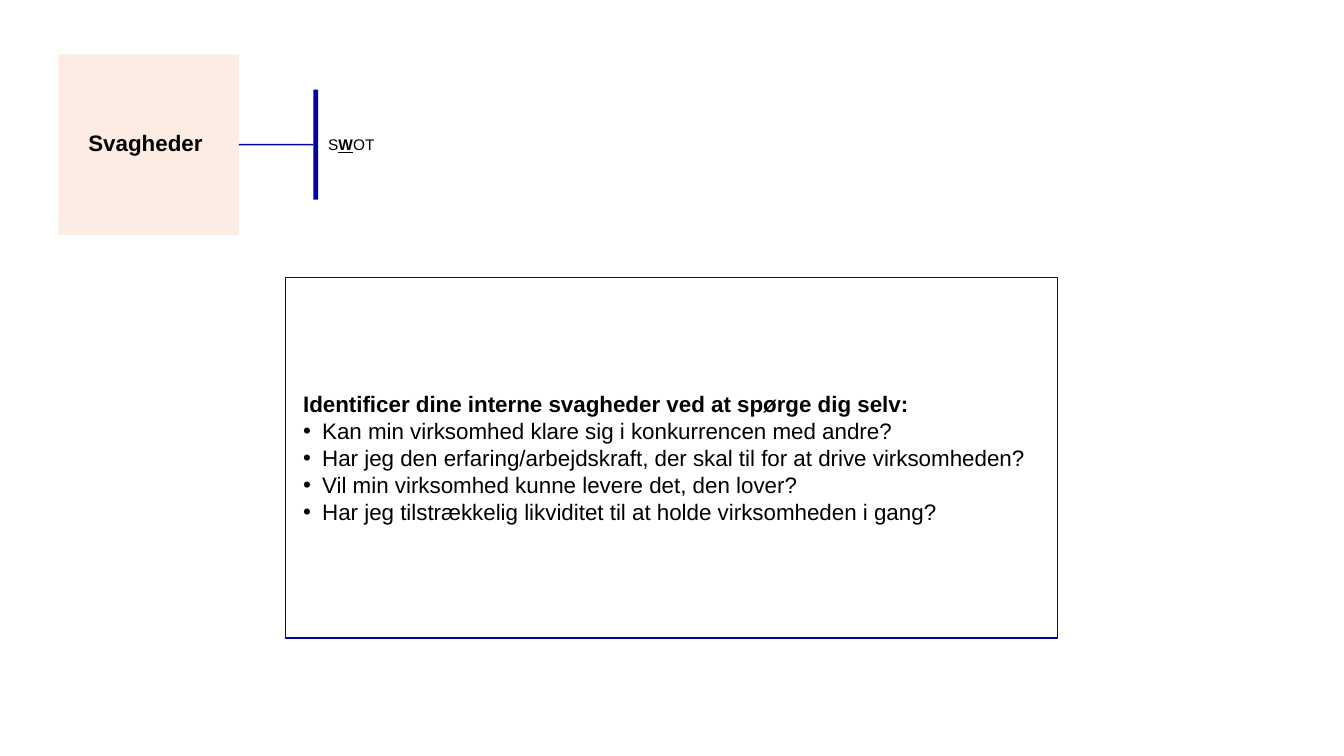
"""Build the slide on weaknesses in a SWOT analysis."""
from lxml.etree import SubElement
from pptx import Presentation
from pptx.dml.color import RGBColor
from pptx.enum.shapes import MSO_CONNECTOR, MSO_SHAPE
from pptx.enum.text import MSO_ANCHOR, PP_ALIGN
from pptx.oxml.ns import qn
from pptx.util import Cm, Pt

BLUE, PEACH, BLACK = "03009F", "FDECE3", "000000"
BODY = {"name": "Arial", "size": Pt(16), "bold": False}
STRONG = {**BODY, "bold": True}
SMALL = {**BODY, "size": Pt(11)}
MARKED = {**SMALL, "bold": True, "underline": True}

TITLE = "Svagheder "
LABEL = [("S", SMALL), ("W", MARKED), ("OT", SMALL)]
HEADING = "Identificer dine interne svagheder ved at spørge dig selv:"
QUESTIONS = [
    "Kan min virksomhed klare sig i konkurrencen med andre?",
    "Har jeg den erfaring/arbejdskraft, der skal til for at drive virksomheden?",
    "Vil min virksomhed kunne levere det, den lover?",
    "Har jeg tilstrækkelig likviditet til at holde virksomheden i gang?",
]

SQUARE_LEFT, SQUARE_TOP, SQUARE_SIZE = 1.47, 1.37, 4.55
BAR_LEFT, BAR_WIDTH, BAR_HEIGHT = 7.9, 0.12, 2.77
LABEL_WIDTH, LABEL_HEIGHT = 4.72, 0.74
QUESTION_BOX = (7.19, 6.99, 19.46, 9.09)
MIDDLE = SQUARE_TOP + SQUARE_SIZE / 2


def color(value):
    """Turn a hex string into a colour."""
    return RGBColor.from_string(value)


def set_values(target, values):
    """Set each named attribute on the target."""
    for name, value in values.items():
        setattr(target, name, value)


def add_runs(paragraph, runs):
    """Add formatted black runs to a paragraph."""
    for text, values in runs:
        run = paragraph.add_run()
        run.text = text
        set_values(run.font, values)
        run.font.color.rgb = color(BLACK)


def add_rectangle(slide, box, fill=None, line=None):
    """Add a flat rectangle with an optional fill and outline."""
    shape = slide.shapes.add_shape(MSO_SHAPE.RECTANGLE, *map(Cm, box))
    shape.shadow.inherit = False
    if fill:
        shape.fill.solid()
        shape.fill.fore_color.rgb = color(fill)
    else:
        shape.fill.background()
    if line:
        shape.line.color.rgb = color(line)
        shape.line.width = Pt(1)
    else:
        shape.line.fill.background()
    return shape


def indent(paragraph, margin, hanging=0):
    """Indent a paragraph and give it a bullet if it hangs."""
    properties = paragraph._p.get_or_add_pPr()
    properties.set("marL", str(Cm(margin)))
    properties.set("indent", str(-Cm(hanging)))
    if hanging:
        SubElement(properties, qn("a:buFont")).set("typeface", "Arial")
        SubElement(properties, qn("a:buChar")).set("char", "•")


def add_header(slide):
    """Add the title square, the bar, the line between them and the label."""
    square = add_rectangle(slide, (SQUARE_LEFT, SQUARE_TOP, SQUARE_SIZE, SQUARE_SIZE), PEACH)
    set_values(square.text_frame, {
        "word_wrap": True, "vertical_anchor": MSO_ANCHOR.MIDDLE,
        "margin_left": 0, "margin_right": 0})
    title = square.text_frame.paragraphs[0]
    set_values(title, {"alignment": PP_ALIGN.CENTER, "line_spacing": 0.9})
    add_runs(title, [(TITLE, STRONG)])

    bar = add_rectangle(slide, (BAR_LEFT, MIDDLE - BAR_HEIGHT / 2, BAR_WIDTH, BAR_HEIGHT), BLUE)
    connector = slide.shapes.add_connector(MSO_CONNECTOR.STRAIGHT, 0, 0, 0, 0)
    connector.begin_connect(bar, 1)
    connector.end_connect(square, 3)
    connector.line.color.rgb = color(BLUE)
    connector.line.width = Pt(1)
    SubElement(connector._element.spPr, qn("a:effectLst"))

    label_box = (BAR_LEFT + BAR_WIDTH, MIDDLE - LABEL_HEIGHT / 2, LABEL_WIDTH, LABEL_HEIGHT)
    label = slide.shapes.add_textbox(*map(Cm, label_box))
    label.text_frame.word_wrap = True
    add_runs(label.text_frame.paragraphs[0], LABEL)


def add_questions(slide):
    """Add the outlined box with the heading and bulleted questions."""
    frame = add_rectangle(slide, QUESTION_BOX, line=BLUE).text_frame
    set_values(frame, {"word_wrap": True, "vertical_anchor": MSO_ANCHOR.MIDDLE})
    heading = frame.paragraphs[0]
    indent(heading, 0.2)
    add_runs(heading, [(HEADING, STRONG)])
    for question in QUESTIONS:
        paragraph = frame.add_paragraph()
        indent(paragraph, 0.68, 0.48)
        add_runs(paragraph, [(question, BODY)])
    for paragraph in frame.paragraphs:
        paragraph.alignment = PP_ALIGN.LEFT


def main():
    """Build and save the presentation."""
    presentation = Presentation()
    set_values(presentation, {"slide_width": Cm(33.87), "slide_height": Cm(19.05)})
    slide = presentation.slides.add_slide(presentation.slide_layouts[6])
    add_questions(slide)
    add_header(slide)
    presentation.save("out.pptx")


if __name__ == "__main__":
    main()
